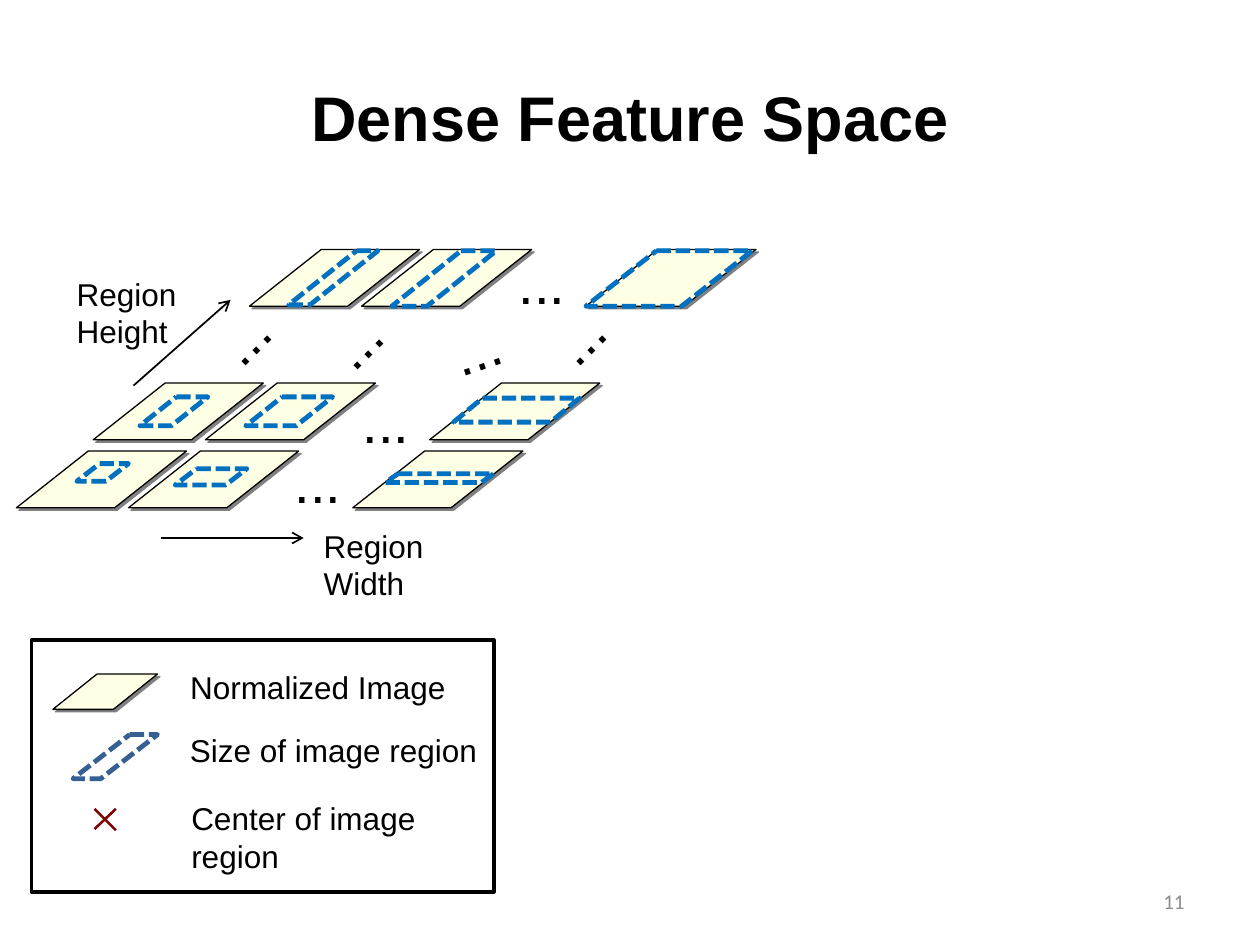
"""Build the Dense Feature Space slide: a grid of image tiles with regions and a legend."""
from dataclasses import dataclass

from lxml.etree import SubElement
from pptx import Presentation
from pptx.dml.color import RGBColor
from pptx.enum.dml import MSO_LINE
from pptx.enum.shapes import MSO_CONNECTOR, MSO_SHAPE
from pptx.enum.text import MSO_ANCHOR, MSO_AUTO_SIZE, PP_ALIGN
from pptx.oxml.ns import qn
from pptx.util import Inches, Pt


@dataclass(frozen=True)
class Theme:
    black: str = "000000"
    tile: str = "FFFFE5"
    shadow: str = "808080"
    region: str = "0070C0"
    legend_region: str = "376092"
    center: str = "800000"
    number: str = "8C8C8C"
    font: str = "Arial"
    number_font: str = "Calibri"
    title_size: int = 36
    dots_size: int = 32
    body_size: int = 18
    number_size: int = 12


THEME = Theme()
TILE_SIZE = (1.35, 0.45, 0.57)
COLUMN_OFFSETS = (0, 0.89, 2.67)
ROW_ORIGINS = [(1.98, 1.98), (0.74, 3.04), (0.13, 3.58)]
REGIONS = [
    (2.29, 1.99, 0.71, 0.43, 0.54),
    (3.11, 1.99, 0.83, 0.44, 0.55),
    (4.65, 1.99, 1.32, 0.44, 0.56),
    (1.11, 3.15, 0.54, 0.23, 0.29),
    (1.95, 3.15, 0.69, 0.23, 0.29),
    (3.60, 3.16, 1.00, 0.19, 0.23),
    (0.61, 3.68, 0.41, 0.14, 0.18),
    (1.39, 3.72, 0.57, 0.13, 0.17),
    (3.06, 3.76, 0.86, 0.07, 0.10),
]
DOTS_SIZE = (0.75, 0.61)
DOTS = [
    (1.61, 2.30, 315), (2.50, 2.33, 315), (4.27, 2.30, 315), (3.49, 2.42, 341.1),
    (2.24, 3.50, 0), (2.78, 3.03, 0), (4.02, 1.92, 0),
]
AXIS_ARROWS = [(1.06, 3.06, 1.83, 2.38), (1.28, 4.27, 2.41, 4.27)]
AXIS_LABELS = [
    ("Region Height", (0.51, 2.13, 1.37, 0.68)),
    ("Region Width", (2.47, 4.13, 1.69, 0.68)),
]
LEGEND_FRAME = (0.25, 5.08, 3.67, 2)
LEGEND_TILE = (0.42, 5.35, 0.83, 0.28, 0.35)
LEGEND_REGION = (0.58, 5.83, 0.67, 0.35, 0.45)
LEGEND_CROSS = [(0.75, 6.42, 0.92, 6.59), (0.75, 6.58, 0.92, 6.42)]
LEGEND_LABELS = [
    ("Normalized Image", (1.41, 5.25, 2.25, 0.4), False),
    ("Size of image region", (1.41, 5.75, 2.5, 0.4), False),
    ("Center of image region", (1.42, 6.29, 2.33, 0.71), True),
]


def color(name):
    return RGBColor.from_string(name)


def add_text(slide, text, box, size=THEME.body_size, ink=THEME.black, font=THEME.font,
             bold=False, align=PP_ALIGN.LEFT, anchor=MSO_ANCHOR.TOP, wrap=True, rotation=0):
    shape = slide.shapes.add_textbox(*map(Inches, box))
    shape.rotation = rotation
    frame = shape.text_frame
    frame.word_wrap = wrap
    frame.vertical_anchor = anchor
    frame.auto_size = MSO_AUTO_SIZE.SHAPE_TO_FIT_TEXT if anchor == MSO_ANCHOR.TOP else MSO_AUTO_SIZE.NONE
    paragraph = frame.paragraphs[0]
    paragraph.text = text
    paragraph.alignment = align
    paragraph.font.name = font
    paragraph.font.size = Pt(size)
    paragraph.font.bold = bold
    paragraph.font.color.rgb = color(ink)


def add_parallelogram(slide, left, top, width, height, slant):
    right, bottom = left + width, top + height
    corners = [(left + slant, top), (right, top), (right - slant, bottom), (left, bottom)]
    points = [(Inches(x), Inches(y)) for x, y in corners]
    builder = slide.shapes.build_freeform(*points[0])
    builder.add_line_segments(points[1:], close=True)
    shape = builder.convert_to_shape()
    shape.shadow.inherit = False
    return shape


def add_tile(slide, *geometry):
    shape = add_parallelogram(slide, *geometry)
    shape.fill.solid()
    shape.fill.fore_color.rgb = color(THEME.tile)
    shape.line.color.rgb = color(THEME.black)
    shape.line.width = Pt(0)
    effects = shape._element.spPr.find(qn("a:effectLst"))
    shadow = SubElement(effects, qn("a:outerShdw"), blurRad="0", dist=str(Pt(2)),
                        dir="2700000", algn="ctr", rotWithShape="0")
    SubElement(shadow, qn("a:srgbClr"), val=THEME.shadow)


def add_region(slide, geometry, ink):
    shape = add_parallelogram(slide, *geometry)
    shape.fill.background()
    shape.line.color.rgb = color(ink)
    shape.line.width = Pt(2.75)
    shape.line.dash_style = MSO_LINE.SQUARE_DOT


def add_line(slide, ends, ink, width, arrow=False):
    connector = slide.shapes.add_connector(MSO_CONNECTOR.STRAIGHT, *map(Inches, ends))
    connector.line.color.rgb = color(ink)
    connector.line.width = Pt(width)
    if arrow:
        SubElement(connector.line._get_or_add_ln(), qn("a:tailEnd"), type="arrow")
    SubElement(connector._element.spPr, qn("a:effectLst"))


def add_grid(slide):
    for left, top in ROW_ORIGINS:
        for offset in COLUMN_OFFSETS:
            add_tile(slide, left + offset, top, *TILE_SIZE)
    for left, top, rotation in DOTS:
        add_text(slide, "...", (left, top, *DOTS_SIZE), THEME.dots_size, rotation=rotation)
    for geometry in REGIONS:
        add_region(slide, geometry, THEME.region)
    for ends in AXIS_ARROWS:
        add_line(slide, ends, THEME.black, 1, arrow=True)
    for text, box in AXIS_LABELS:
        add_text(slide, text, box)


def add_legend(slide):
    add_tile(slide, *LEGEND_TILE)
    for ends in LEGEND_CROSS:
        add_line(slide, ends, THEME.center, 1.45)
    add_region(slide, LEGEND_REGION, THEME.legend_region)
    frame = slide.shapes.add_shape(MSO_SHAPE.RECTANGLE, *map(Inches, LEGEND_FRAME))
    frame.shadow.inherit = False
    frame.fill.background()
    frame.line.color.rgb = color(THEME.black)
    frame.line.width = Pt(2)
    for text, box, wrap in LEGEND_LABELS:
        add_text(slide, text, box, wrap=wrap)


def main():
    presentation = Presentation()
    presentation.slide_width, presentation.slide_height = Inches(10), Inches(7.5)
    slide = presentation.slides.add_slide(presentation.slide_layouts[6])
    add_text(slide, "11", (7.17, 6.95, 2.33, 0.4), THEME.number_size, THEME.number,
             THEME.number_font, align=PP_ALIGN.RIGHT, anchor=MSO_ANCHOR.MIDDLE)
    add_grid(slide)
    add_text(slide, "Dense Feature Space", (0.5, 0.3, 9, 1.25), THEME.title_size,
             bold=True, align=PP_ALIGN.CENTER, anchor=MSO_ANCHOR.MIDDLE)
    add_legend(slide)
    presentation.save("out.pptx")


if __name__ == "__main__":
    main()
